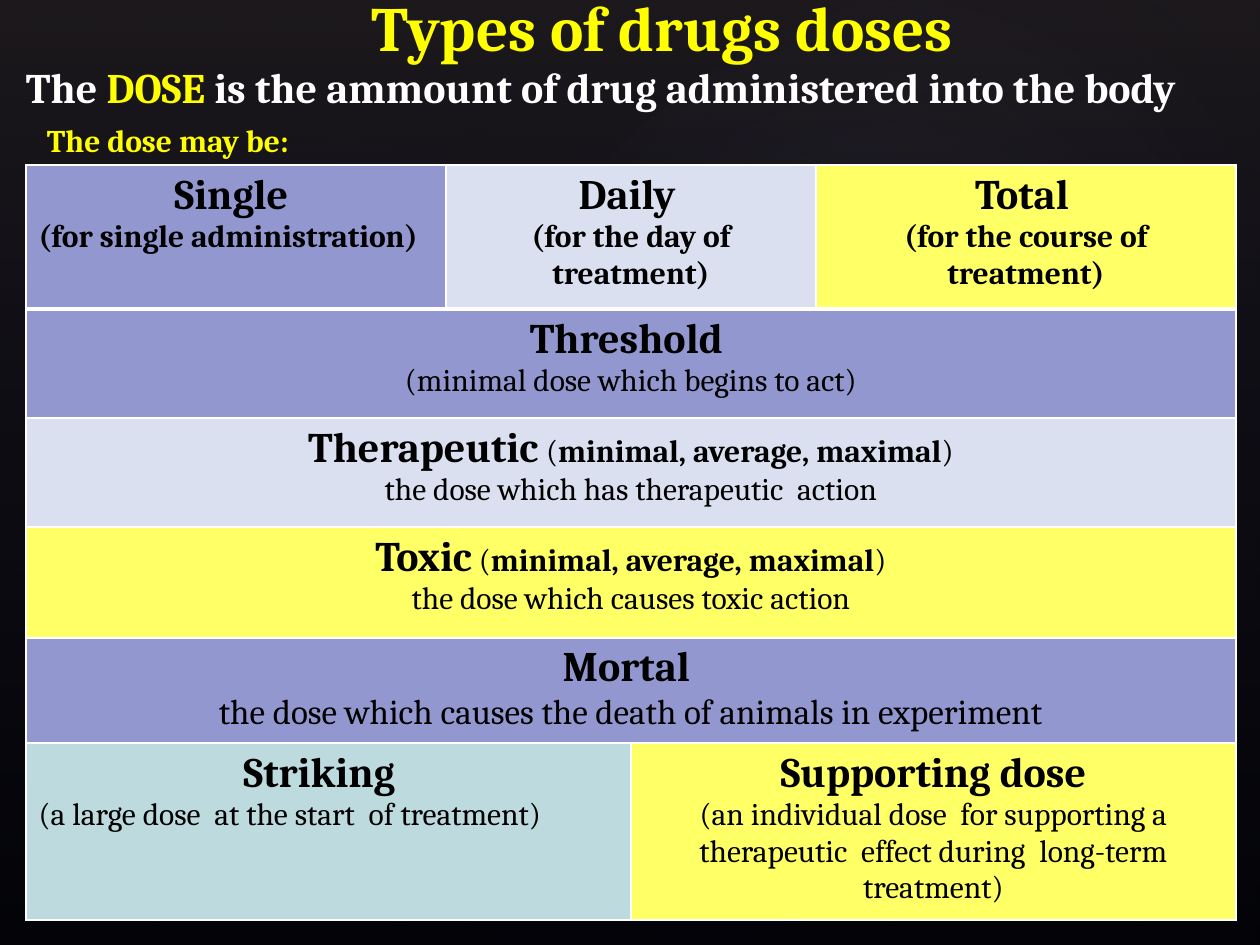
from dataclasses import dataclass

from lxml.etree import SubElement
from pptx import Presentation
from pptx.dml.color import RGBColor
from pptx.enum.shapes import MSO_SHAPE as Preset
from pptx.enum.text import MSO_ANCHOR as Anchor, PP_ALIGN as Align
from pptx.oxml import parse_xml
from pptx.oxml.ns import nsdecls, qn
from pptx.util import Emu, Pt

FONT = "Cambria"
BLACK = RGBColor(0x00, 0x00, 0x00)
WHITE = RGBColor(0xFF, 0xFF, 0xFF)
YELLOW = RGBColor(0xFF, 0xFF, 0x00)
LEMON = RGBColor(0xFF, 0xFF, 0x66)
VIOLET = RGBColor(0x92, 0x97, 0xCF)
PALE = RGBColor(0xDA, 0xE0, 0xEF)
TEAL = RGBColor(0xBD, 0xDA, 0xDF)
PLUM = RGBColor(0x50, 0x46, 0x52)
NAVY = RGBColor(0x24, 0x28, 0x52)
MIST = RGBColor(0xC4, 0xBC, 0xC6)


def px(length: int) -> Emu:
    return Emu(round(length * 914400 / 126))


@dataclass(frozen=True)
class Span:
    text: str
    size: int
    bold: bool = True
    color: RGBColor = BLACK


@dataclass(frozen=True)
class Line:
    spans: tuple[Span, ...]
    align: Align = Align.CENTER


@dataclass(frozen=True)
class Stop:
    position: int
    color: RGBColor
    opacity: int


@dataclass(frozen=True)
class Glow:
    left: int
    top: int
    width: int
    height: int
    rotation: float
    opacity: int


@dataclass(frozen=True)
class Caption:
    left: int
    top: int
    width: int
    height: int
    line: Line
    anchor: Anchor = Anchor.TOP
    indent: int = 13


@dataclass(frozen=True)
class Dose:
    row: int
    column: int
    columns: int
    fill: RGBColor
    lines: tuple[Line, ...]


def heading(text: str, *extra: Span) -> Line:
    return Line((Span(text, 24), *extra))


def detail(text: str, size: int = 18, bold: bool = False, align: Align = Align.CENTER) -> Line:
    return Line((Span(text, size, bold),), align)


RANGE = (Span("(", 18, False), Span("minimal, average, maximal", 18), Span(")", 18, False))
GAP = Span(" ", 20)

GLOWS = (
    Glow(189, 144, 998, 786, 328.7, 7),
    Glow(-38, 161, 764, 617, 294.3, 8),
    Glow(451, 16, 893, 655, 328.7, 8),
)
CAPTIONS = (
    Caption(81, 1, 1040, 69, Line((Span("Types of drugs doses", 36, True, YELLOW),)),
            Anchor.BOTTOM, 135),
    Caption(13, 55, 1236, 63, Line((
        Span("The ", 24, True, WHITE),
        Span("DOSE", 24, True, YELLOW),
        Span(" is the ammount of drug administered into the body", 24, True, WHITE),
    ), Align.LEFT)),
    Caption(34, 115, 728, 50, Line((Span("The dose may be:", 18, True, YELLOW),), Align.LEFT)),
)
COLUMN_WIDTHS = (420, 185, 185, 420)
ROW_HEIGHTS = (144, 109, 109, 111, 105, 177)
DOSES = (
    Dose(0, 0, 1, VIOLET, (
        heading("Single "), detail("(for single administration)", bold=True, align=Align.LEFT))),
    Dose(0, 1, 2, PALE, (
        heading("Daily", GAP), detail("(for the day of treatment)", bold=True))),
    Dose(0, 3, 1, LEMON, (
        heading("Total", GAP), detail("(for the course of treatment)", bold=True))),
    Dose(1, 0, 4, VIOLET, (
        heading("Threshold "), detail("(minimal dose which begins to act)"))),
    Dose(2, 0, 4, PALE, (
        heading("Therapeutic", GAP, *RANGE), detail("the dose which has therapeutic  action"))),
    Dose(3, 0, 4, LEMON, (
        heading("Toxic", Span(" ", 18, False), *RANGE),
        detail("the dose which causes toxic action"))),
    Dose(4, 0, 4, VIOLET, (
        heading("Mortal "),
        detail("the dose which causes the death of animals in experiment", 20))),
    Dose(5, 0, 2, TEAL, (
        heading("Striking  "),
        detail("(a large dose  at the start  of treatment)", align=Align.LEFT))),
    Dose(5, 2, 2, LEMON, (
        heading("Supporting dose"),
        detail("(an individual dose  for supporting a therapeutic  effect during  "
               "long-term treatment)"))),
)


def fill_gradient(shape, stops: tuple[Stop, ...], direction: str) -> None:
    marks = "".join(
        f'<a:gs pos="{stop.position * 1000}"><a:srgbClr val="{stop.color}">'
        f'<a:alpha val="{stop.opacity * 1000}"/></a:srgbClr></a:gs>'
        for stop in stops
    )
    gradient = parse_xml(
        f'<a:gradFill {nsdecls("a")} rotWithShape="1"><a:gsLst>{marks}</a:gsLst>'
        f"{direction}</a:gradFill>"
    )
    shape.shadow.inherit = False
    shape.line.fill.background()
    shape._element.spPr.find(qn("a:prstGeom")).addnext(gradient)


def draw_backdrop(page, width: int, height: int) -> None:
    page.background.fill.solid()
    page.background.fill.fore_color.rgb = BLACK
    veil = page.shapes.add_shape(Preset.RECTANGLE, 0, 0, width, height)
    fill_gradient(veil, (Stop(0, PLUM, 36), Stop(100, NAVY, 10)),
                  '<a:lin ang="5400000" scaled="0"/>')
    for glow in GLOWS:
        oval = page.shapes.add_shape(
            Preset.OVAL, px(glow.left), px(glow.top), px(glow.width), px(glow.height))
        oval.rotation = glow.rotation
        fill_gradient(
            oval, (Stop(0, MIST, glow.opacity), Stop(58, NAVY, 0)),
            '<a:path path="circle"><a:fillToRect l="50000" t="50000" r="50000" b="50000"/></a:path>')


def write_line(para, line: Line) -> None:
    para.alignment = line.align
    para.font.name = FONT
    for span in line.spans:
        run = para.add_run()
        run.text = span.text
        run.font.size = Pt(span.size)
        run.font.bold = span.bold
        run.font.color.rgb = span.color


def draw_caption(page, caption: Caption) -> None:
    box = page.shapes.add_textbox(
        px(caption.left), px(caption.top), px(caption.width), px(caption.height))
    frame = box.text_frame
    frame.word_wrap = True
    frame.vertical_anchor = caption.anchor
    frame.margin_left = px(caption.indent)
    write_line(frame.paragraphs[0], caption.line)


def draw_borders(cell, row: int) -> None:
    widths = {"lnL": 1, "lnR": 1, "lnT": 3 if row == 1 else 1, "lnB": 3 if row == 0 else 1}
    properties = cell._tc.get_or_add_tcPr()
    for side, width in widths.items():
        edge = SubElement(properties, qn(f"a:{side}"), w=str(Pt(width)))
        paint = SubElement(edge, qn("a:solidFill"))
        SubElement(paint, qn("a:srgbClr"), val=str(WHITE))


def draw_table(page) -> None:
    table = page.shapes.add_table(
        len(ROW_HEIGHTS), len(COLUMN_WIDTHS), px(26), px(165),
        px(sum(COLUMN_WIDTHS)), px(sum(ROW_HEIGHTS))).table
    table.first_row = table.horz_banding = False
    for column, width in zip(table.columns, COLUMN_WIDTHS):
        column.width = px(width)
    for index, (row, height) in enumerate(zip(table.rows, ROW_HEIGHTS)):
        row.height = px(height)
        for cell in row.cells:
            draw_borders(cell, index)
    for dose in DOSES:
        cell = table.cell(dose.row, dose.column)
        if dose.columns > 1:
            cell.merge(table.cell(dose.row, dose.column + dose.columns - 1))
        cell.fill.solid()
        cell.fill.fore_color.rgb = dose.fill
        frame = cell.text_frame
        for index, line in enumerate(dose.lines):
            write_line(frame.add_paragraph() if index else frame.paragraphs[0], line)


def main() -> None:
    deck = Presentation()
    deck.slide_width, deck.slide_height = px(1260), px(945)
    page = deck.slides.add_slide(deck.slide_layouts[6])
    draw_backdrop(page, deck.slide_width, deck.slide_height)
    for caption in CAPTIONS:
        draw_caption(page, caption)
    draw_table(page)
    deck.save("out.pptx")


if __name__ == "__main__":
    main()
